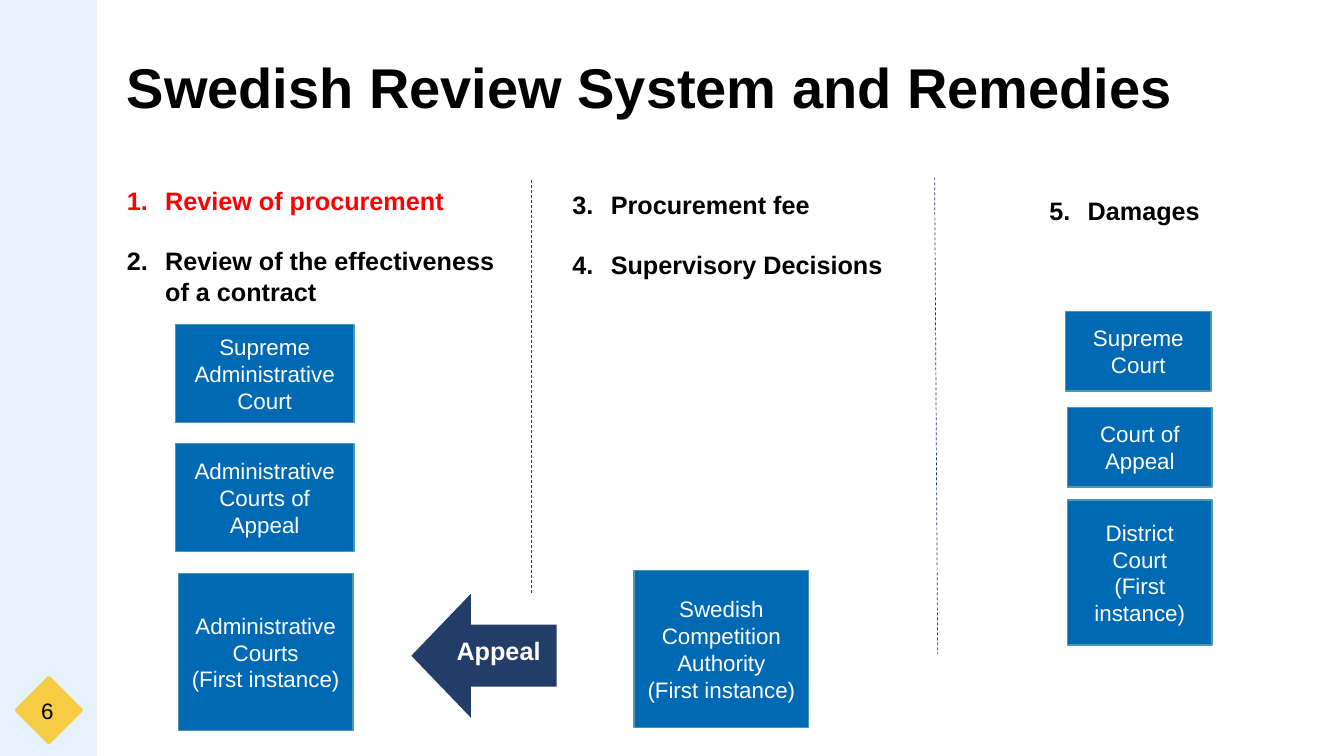
"""Build the slide on the Swedish review system and its remedies."""
from lxml import etree
from pptx import Presentation
from pptx import util as u
from pptx.dml.color import RGBColor
from pptx.enum import dml, shapes, text
from pptx.oxml.ns import qn

THEME = {
    "font": "Arial",
    "black": "000000", "white": "FFFFFF", "red": "FF0000",
    "band": "E6F2FE", "badge": "F6CC45", "navy": "223D68",
    "court": "0069B4", "court_edge": "4A9AA9",
    "title": 40, "heading": 18, "label": 16,
}

TITLE = "Swedish Review System and Remedies"
PAGE_NUMBER = "6"
APPEAL = "Appeal"

REMEDIES = [
    (1, (1.16, 1.79, 11.45, 1.31), [
        ("Review of procurement", "red"),
        ("Review of the effectiveness\nof a contract", "black")]),
    (3, (5.58, 1.83, 6.67, 1.01), [
        ("Procurement fee", "black"),
        ("Supervisory Decisions", "black")]),
    (5, (10.31, 1.89, 1.88, 0.4), [("Damages", "black")]),
]

COURTS = [
    ((1.74, 3.22, 1.77, 0.97), ["Supreme Administrative Court"]),
    ((1.74, 4.4, 1.77, 1.07), ["Administrative Courts of Appeal"]),
    ((1.77, 5.69, 1.73, 1.56), ["Administrative Courts", "(First instance)"]),
    ((6.29, 5.66, 1.73, 1.56), ["Swedish Competition Authority", "(First instance)"]),
    ((10.57, 3.09, 1.44, 0.79), ["Supreme Court"]),
    ((10.59, 4.04, 1.43, 0.79), ["Court of Appeal"]),
    ((10.59, 4.96, 1.43, 1.44), ["District Court", "(First instance)"]),
]

DIVIDERS = [(5.27, 1.79, 5.27, 5.89), (9.27, 1.76, 9.3, 6.49)]


def inches(values):
    return [u.Inches(value) for value in values]


def colour(name):
    return RGBColor.from_string(THEME[name])


def assign(target, formats):
    for attribute, value in formats.items():
        setattr(target, attribute, value)


def write(holder, lines, size, ink="black", bold=False, anchor="MIDDLE", align="CENTER", **spacing):
    frame = holder.text_frame
    assign(frame, {"word_wrap": True, "vertical_anchor": text.MSO_ANCHOR[anchor]})
    for index, line in enumerate(lines):
        paragraph = frame.add_paragraph() if index else frame.paragraphs[0]
        paragraph.text = line
        assign(paragraph, {"alignment": text.PP_ALIGN[align], **spacing})
        for run in paragraph.runs:
            assign(run.font, {"name": THEME["font"], "size": u.Pt(THEME[size]), "bold": bold})
            run.font.color.rgb = colour(ink)
    return frame.paragraphs


def add_block(slide, kind, box, fill, edge=None):
    block = slide.shapes.add_shape(shapes.MSO_SHAPE[kind], *inches(box))
    block.shadow.inherit = False
    block.fill.solid()
    block.fill.fore_color.rgb = colour(fill)
    if edge:
        block.line.color.rgb = colour(edge)
        block.line.width = u.Pt(1)
    else:
        block.line.fill.background()
    return block


def add_remedies(slide, start, box, items):
    listing = slide.shapes.add_textbox(*inches(box))
    paragraphs = write(listing, [item for item, _ in items], "heading", bold=True,
                       anchor="TOP", align="LEFT")
    for index, (paragraph, (_, ink)) in enumerate(zip(paragraphs, items)):
        properties = paragraph._p.get_or_add_pPr()
        properties.set("marL", str(u.Inches(0.38)))
        properties.set("indent", str(u.Inches(-0.38)))
        etree.SubElement(properties, qn("a:buFont"), typeface="+mj-lt")
        etree.SubElement(properties, qn("a:buAutoNum"), type="arabicPeriod", startAt=str(start))
        if index:
            paragraph.space_before = u.Pt(21.5)
        for run in paragraph.runs:
            run.font.color.rgb = colour(ink)


def add_divider(slide, ends):
    divider = slide.shapes.add_connector(shapes.MSO_CONNECTOR.STRAIGHT, *inches(ends))
    etree.SubElement(divider._element.spPr, qn("a:effectLst"))
    divider.line.color.rgb = colour("navy")
    assign(divider.line, {"width": u.Pt(0.5), "dash_style": dml.MSO_LINE.DASH})


def main():
    deck = Presentation()
    assign(deck, {"slide_width": u.Inches(13.33), "slide_height": u.Inches(7.5)})
    slide = deck.slides.add_slide(deck.slide_layouts[6])

    add_block(slide, "RECTANGLE", (0, 0, 0.96, 7.5), "band")
    badge = add_block(slide, "ROUNDED_RECTANGLE", (0.24, 6.8, 0.49, 0.49), "badge")
    badge.rotation = 315
    badge.adjustments[0] = 0.05

    title = slide.shapes.add_textbox(*inches((1.16, 0.41, 11.46, 0.98)))
    write(title, [TITLE], "title", bold=True, align="LEFT", line_spacing=0.9)
    page = slide.shapes.add_textbox(*inches((0.14, 6.71, 0.66, 0.68)))
    write(page, [PAGE_NUMBER], "label")

    for start, box, items in REMEDIES:
        add_remedies(slide, start, box, items)
    for box, lines in COURTS:
        write(add_block(slide, "RECTANGLE", box, "court", "court_edge"), lines, "label", "white")

    arrow = add_block(slide, "RIGHT_ARROW", (4.08, 5.89, 1.44, 1.23), "navy")
    arrow.rotation = 180
    arrow.adjustments[1] = 0.48
    appeal = add_block(slide, "RECTANGLE", (4.43, 6.25, 1.08, 0.4), "navy")
    write(appeal, [APPEAL], "heading", "white", bold=True, anchor="TOP", align="LEFT")

    for ends in DIVIDERS:
        add_divider(slide, ends)
    deck.save("out.pptx")


if __name__ == "__main__":
    main()
